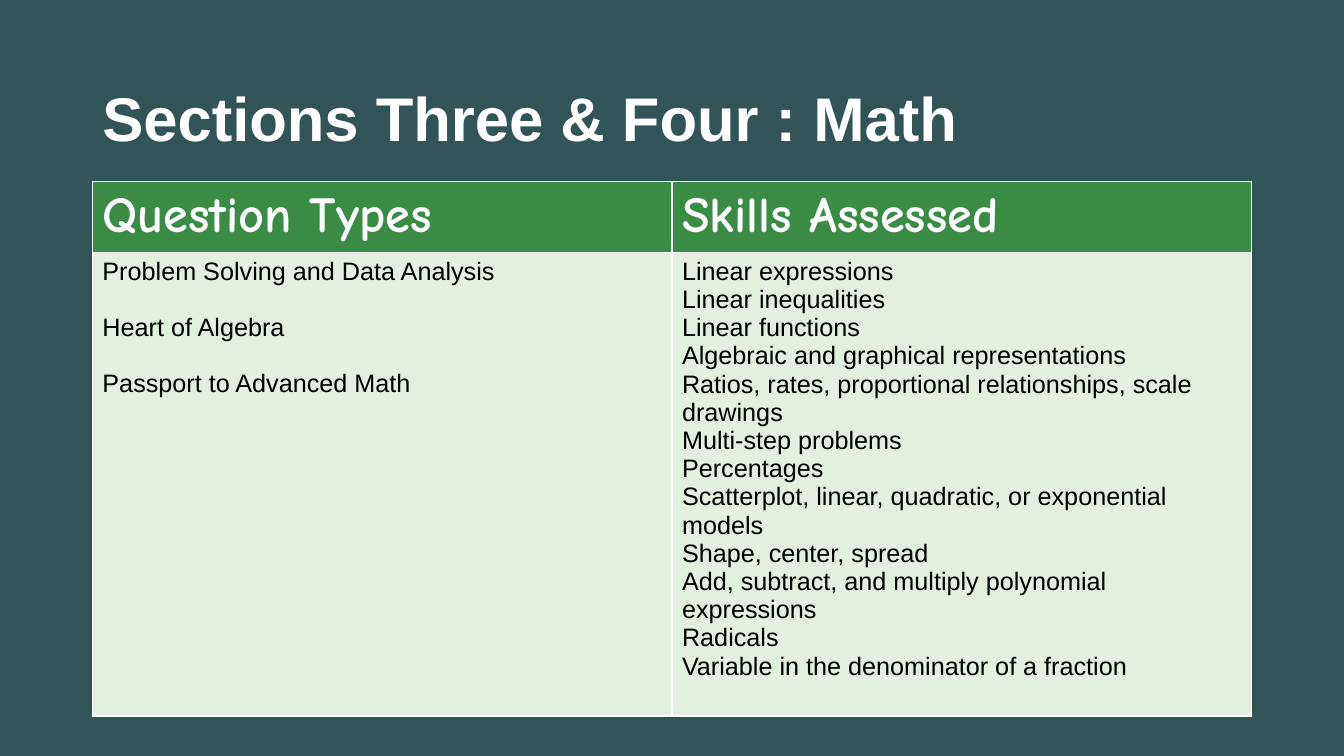
from dataclasses import dataclass

from lxml.etree import SubElement as SubElem
from pptx import Presentation as Deck
from pptx.dml.color import RGBColor as RGB
from pptx.enum.text import MSO_ANCHOR as Anchor
from pptx.oxml.ns import qn
from pptx.table import _Cell as Cell
from pptx.text.text import TextFrame as Frame
from pptx.util import Emu, Pt

SLATE = RGB(0x31, 0x54, 0x57)
GREEN = RGB(0x3A, 0x8C, 0x45)
MINT = RGB(0xE3, 0xF0, 0xDF)
WHITE = RGB(0xFF, 0xFF, 0xFF)
BLACK = RGB(0x00, 0x00, 0x00)


@dataclass(frozen=True)
class Style:
    face: str
    size: int
    color: RGB
    bold: bool


@dataclass(frozen=True)
class Column:
    head: str
    items: tuple[str, ...]
    gap: int


TITLE = Style("Arial", 44, WHITE, True)
HEAD = Style("Comic Neue", 36, WHITE, True)
BODY = Style("Arial", 18, BLACK, False)

LEFT, WIDTH = 88, 1104
ROWS = (66, 413)
COLUMNS = (
    Column("Question Types", (
        "Problem Solving and Data Analysis",
        "Heart of Algebra",
        "Passport to Advanced Math",
    ), 20),
    Column("Skills Assessed", (
        "Linear expressions",
        "Linear inequalities",
        "Linear functions",
        "Algebraic and graphical representations",
        "Ratios, rates, proportional relationships, scale drawings",
        "Multi-step problems",
        "Percentages",
        "Scatterplot, linear, quadratic, or exponential models",
        "Shape, center, spread",
        "Add, subtract, and multiply polynomial expressions",
        "Radicals",
        "Variable in the denominator of a fraction",
    ), 0),
)


def px(count: int) -> Emu:
    return Emu(count * 9525)


def write(frame: Frame, lines: tuple[str, ...], style: Style, gap: int = 0) -> None:
    for num, line in enumerate(lines):
        para = frame.add_paragraph() if num else frame.paragraphs[0]
        if num and gap:
            para.space_before = Pt(gap)
        run = para.add_run()
        run.text = line
        run.font.name = style.face
        run.font.size = Pt(style.size)
        run.font.bold = style.bold
        run.font.color.rgb = style.color


def paint(cell: Cell, color: RGB) -> None:
    props = cell._tc.get_or_add_tcPr()
    for side in ("L", "R", "T", "B"):
        edge = SubElem(props, qn(f"a:ln{side}"), w=str(Pt(1)))
        fill = SubElem(edge, qn("a:solidFill"))
        SubElem(fill, qn("a:srgbClr"), val=str(WHITE))
    cell.fill.solid()
    cell.fill.fore_color.rgb = color


def main() -> None:
    deck = Deck()
    deck.slide_width, deck.slide_height = px(1280), px(720)
    slide = deck.slides.add_slide(deck.slide_layouts[6])
    slide.background.fill.solid()
    slide.background.fill.fore_color.rgb = SLATE

    title = slide.shapes.add_textbox(px(LEFT), px(42), px(WIDTH), px(139)).text_frame
    title.word_wrap = True
    title.vertical_anchor = Anchor.MIDDLE
    write(title, ("Sections Three & Four : Math",), TITLE)

    table = slide.shapes.add_table(
        len(ROWS), len(COLUMNS), px(LEFT), px(173), px(WIDTH), px(sum(ROWS))
    ).table
    for row, height in zip(table.rows, ROWS):
        row.height = px(height)
    for num, column in enumerate(COLUMNS):
        table.columns[num].width = px(WIDTH // len(COLUMNS))
        top, base = table.cell(0, num), table.cell(1, num)
        paint(top, GREEN)
        paint(base, MINT)
        write(top.text_frame, (column.head,), HEAD)
        write(base.text_frame, column.items, BODY, column.gap)

    deck.save("out.pptx")


if __name__ == "__main__":
    main()
